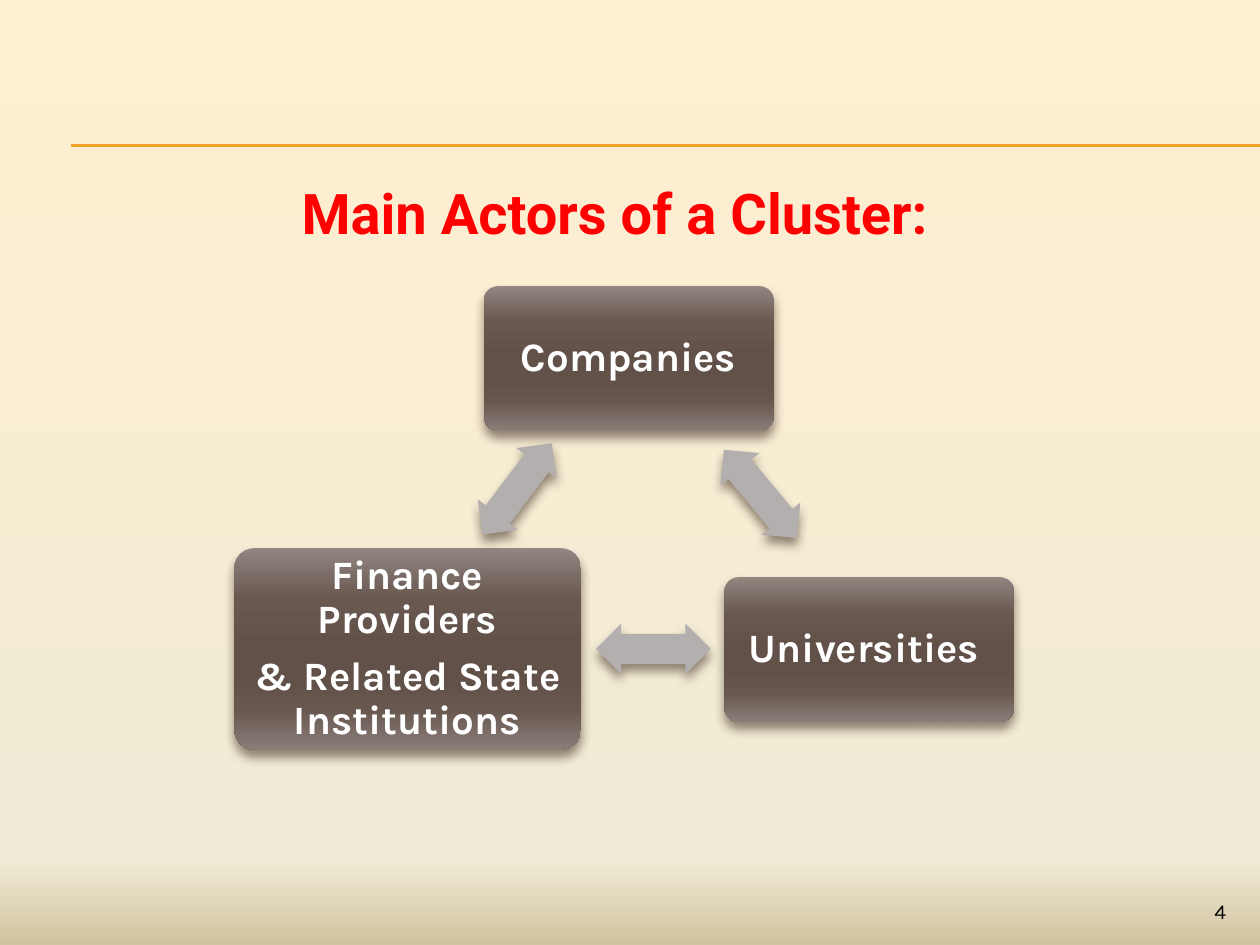
from lxml import etree
from pptx import Presentation
from pptx import util as u
from pptx.dml.color import RGBColor
from pptx.enum import shapes, text
from pptx.oxml.ns import qn

COLORS = {
    "rule": "F0A22E", "title": "FF0000", "label": "FFFFFF", "number": "000000",
    "arrow": "B2AFAE", "shadow": "4E3B30",
}
BACKGROUND = [(0, "FFEFD1"), (91, "F0EBD5"), (100, "D1C39F")]
BOX_FILL = [(0, "918681"), (25, "695850"), (50, "615149"),
            (65, "615149"), (80, "68574F"), (100, "8A7E79")]
ACTORS = [
    (3.84, 2.27, 2.3, 1.15, ["Companies"]),
    (5.75, 4.58, 2.3, 1.15, ["Universities "]),
    (1.86, 4.35, 2.75, 1.6, ["Finance Providers", "& Related State Institutions"]),
]
ARROWS = [(5.58, 3.72, 50.3), (4.73, 4.95, 180), (3.65, 3.68, 307.1)]
TITLE = {"size": u.Pt(32), "name": "Roboto", "bold": True}
LABEL = {"size": u.Pt(23), "name": "Karla", "bold": True}
NUMBER = {"size": u.Pt(12), "name": "Karla", "bold": False}


def rgb(name):
    return RGBColor.from_string(COLORS[name])


def set_attrs(obj, values):
    for key, value in values.items():
        setattr(obj, key, value)


def add_color(parent, tag, color, **attrs):
    el = etree.SubElement(parent, qn(tag), **attrs)
    return etree.SubElement(el, qn("a:srgbClr"), val=color)


def fill_gradient(fill, stops):
    fill.gradient()
    fill.gradient_angle = 270
    gs_list = fill.gradient_stops[0]._gs.getparent()
    for gs in list(gs_list):
        gs_list.remove(gs)
    for pos, color in stops:
        add_color(gs_list, "a:gs", color, pos=str(pos * 1000))


def add_shadow(sp):
    sp.shadow.inherit = False
    effects = sp._element.spPr.find(qn("a:effectLst"))
    clr = add_color(effects, "a:outerShdw", COLORS["shadow"],
                    blurRad=str(u.Pt(6)), dist=str(u.Pt(4)),
                    dir="5400000", rotWithShape="0")
    etree.SubElement(clr, qn("a:alpha"), val="60000")


def add_rule(s, y):
    line = s.shapes.add_connector(shapes.MSO_CONNECTOR.STRAIGHT, u.Inches(0.56),
                                  u.Inches(y), u.Inches(10), u.Inches(y))
    line.line.color.rgb = rgb("rule")
    line.line.width = u.Pt(0.75)
    etree.SubElement(line._element.spPr, qn("a:effectLst"))


def write(tf, lines, font, color, para, anchor=text.MSO_ANCHOR.MIDDLE):
    set_attrs(tf, {"word_wrap": True, "vertical_anchor": anchor})
    for i, content in enumerate(lines):
        p = tf.add_paragraph() if i else tf.paragraphs[0]
        set_attrs(p, para)
        r = p.add_run()
        r.text = content
        set_attrs(r.font, font)
        r.font.color.rgb = rgb(color)


def add_text(s, box, content, font, color, align, anchor):
    tb = s.shapes.add_textbox(*map(u.Inches, box))
    write(tb.text_frame, [content], font, color, {"alignment": align}, anchor)


def add_shape(s, kind, box, adjustments):
    sp = s.shapes.add_shape(kind, *map(u.Inches, box))
    for i, value in enumerate(adjustments):
        sp.adjustments[i] = value
    sp.line.fill.background()
    add_shadow(sp)
    return sp


def add_actor(s, x, y, w, h, lines):
    sp = add_shape(s, shapes.MSO_SHAPE.ROUNDED_RECTANGLE, (x, y, w, h), [0.1])
    fill_gradient(sp.fill, BOX_FILL)
    tf = sp.text_frame
    set_attrs(tf, dict.fromkeys(
        ("margin_left", "margin_right", "margin_top", "margin_bottom"), u.Inches(0.05)))
    write(tf, lines, LABEL, "label",
          {"alignment": text.PP_ALIGN.CENTER, "line_spacing": 0.9, "space_after": u.Pt(8)})


def add_arrow(s, x, y, rotation):
    sp = add_shape(s, shapes.MSO_SHAPE.LEFT_RIGHT_ARROW, (x, y, 0.91, 0.4), [0.6, 0.5])
    sp.rotation = rotation
    sp.fill.solid()
    sp.fill.fore_color.rgb = rgb("arrow")


def main():
    prs = Presentation()
    set_attrs(prs, {"slide_width": u.Inches(10), "slide_height": u.Inches(7.5)})
    s = prs.slides.add_slide(prs.slide_layouts[6])
    fill_gradient(s.background.fill, BACKGROUND)
    for y in (1.15, 1.16):
        add_rule(s, y)
    add_text(s, (1.69, 1.17, 6.38, 1.02), "Main Actors of a Cluster:", TITLE, "title",
             text.PP_ALIGN.CENTER, text.MSO_ANCHOR.MIDDLE)
    for actor, arrow in zip(ACTORS, ARROWS):
        add_actor(s, *actor)
        add_arrow(s, *arrow)
    add_text(s, (9, 7.08, 0.83, 0.27), "4", NUMBER, "number",
             text.PP_ALIGN.RIGHT, text.MSO_ANCHOR.TOP)
    prs.save("out.pptx")


if __name__ == "__main__":
    main()
